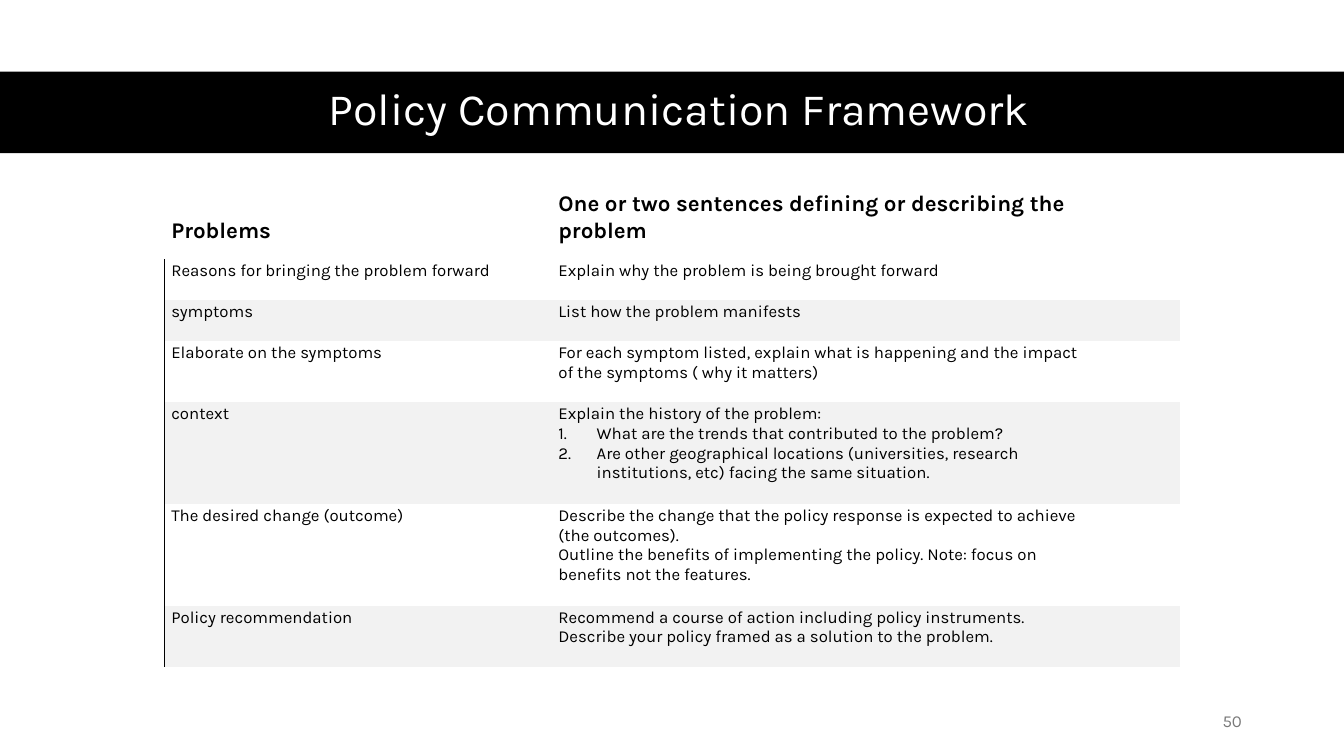
from dataclasses import dataclass

from lxml import etree
from pptx import Presentation
from pptx import util as u
from pptx.dml.color import RGBColor
from pptx.enum import shapes, text
from pptx.oxml.ns import qn

COLOURS = {"black": "000000", "white": "FFFFFF", "band": "F2F2F2", "grey": "797979"}
FONT = "Karla"
PAGE_WIDTH, PAGE_HEIGHT = u.Inches(13.333), u.Inches(7.5)
GRID_COLUMNS, GRID_ROWS = 160, 90
COLUMN_SPANS = (46.08, 64.8, 10.08)
NO_STYLE = "{2D5ABB26-0587-4C30-8999-92F81FD0307C}"


@dataclass(frozen=True)
class Area:
    column: float
    row: float
    columns: float
    rows: float

    def emu(self) -> tuple[int, int, int, int]:
        return across(self.column), down(self.row), across(self.columns), down(self.rows)


@dataclass(frozen=True)
class Label:
    words: str
    area: Area
    size: int
    colour: str
    align: text.PP_ALIGN
    spacing: float = 1.0


@dataclass(frozen=True)
class Topic:
    name: str
    guidance: tuple[str, ...]
    rows: float
    questions: tuple[str, ...] = ()


BANNER = Area(0, 8.52, GRID_COLUMNS, 9.72)
TABLE_CORNER = (19.56, 21.96)
LABELS = (
    Label("Policy Communication Framework", Area(7.32, 8.4, 147.12, 9.72),
          32, "white", text.PP_ALIGN.CENTER, 0.9),
    Label("50", Area(113.04, 83.4, 36, 4.8), 12, "grey", text.PP_ALIGN.RIGHT),
)
TOPICS = (
    Topic("Problems", ("One or two sentences defining or describing the problem",), 8.88),
    Topic("Reasons for bringing the problem forward",
          ("Explain why the problem is being brought forward",), 4.88),
    Topic("symptoms", ("List how the problem manifests",), 4.88),
    Topic("Elaborate on the symptoms",
          ("For each symptom listed, explain what is happening and the impact "
           "of the symptoms ( why it matters)",), 7.32),
    Topic("context", ("Explain the history of the problem:",), 12.1,
          ("What are the trends that contributed to the problem?",
           "Are other geographical locations (universities, research institutions, etc) "
           "facing the same situation.")),
    Topic("The desired change (outcome)",
          ("Describe the change that the policy response is expected to achieve (the outcomes).",
           "Outline the benefits of implementing the policy. Note: focus on benefits "
           "not the features."), 12.1),
    Topic("Policy recommendation",
          ("Recommend a course of action including policy instruments.",
           "Describe your policy framed as a solution to the problem."), 7.32),
)


def across(columns: float) -> int:
    return round(PAGE_WIDTH * columns / GRID_COLUMNS)


def down(rows: float) -> int:
    return round(PAGE_HEIGHT * rows / GRID_ROWS)


def rgb(name: str) -> RGBColor:
    return RGBColor.from_string(COLOURS[name])


def set_font(para, size: int, colour: str, bold: bool = False) -> None:
    para.font.name = FONT
    para.font.size = u.Pt(size)
    para.font.bold = bold
    para.font.color.rgb = rgb(colour)


def draw_banner(page) -> None:
    banner = page.shapes.add_shape(shapes.MSO_SHAPE.RECTANGLE, *BANNER.emu())
    banner.shadow.inherit = False
    banner.fill.solid()
    banner.fill.fore_color.rgb = rgb("black")
    banner.line.fill.background()


def draw_label(page, label: Label) -> None:
    frame = page.shapes.add_textbox(*label.area.emu()).text_frame
    frame.word_wrap = True
    frame.vertical_anchor = text.MSO_ANCHOR.MIDDLE
    para = frame.paragraphs[0]
    para.text = label.words
    para.alignment = label.align
    para.line_spacing = label.spacing
    set_font(para, label.size, label.colour)


def number_paragraph(para) -> None:
    properties = para._p.get_or_add_pPr()
    properties.set("marL", str(u.Inches(0.38)))
    properties.set("indent", str(-u.Inches(0.38)))
    bullet = etree.Element(qn("a:buAutoNum"), type="arabicPeriod")
    properties.insert(0, bullet)


def add_left_border(cell) -> None:
    border = etree.Element(qn("a:lnL"), w=str(u.Pt(0.75)))
    fill = etree.SubElement(border, qn("a:solidFill"))
    etree.SubElement(fill, qn("a:srgbClr"), val=COLOURS["black"])
    cell._tc.get_or_add_tcPr().insert(0, border)


def fill_cell(cell, lines: tuple[str, ...], questions: tuple[str, ...],
              heading: bool, banded: bool) -> None:
    cell.margin_left, cell.margin_top = u.Inches(0.07), u.Inches(0.02)
    cell.margin_right, cell.margin_bottom = u.Inches(0.1), u.Inches(0.15)
    cell.vertical_anchor = text.MSO_ANCHOR.BOTTOM if heading else text.MSO_ANCHOR.TOP
    if banded:
        cell.fill.solid()
        cell.fill.fore_color.rgb = rgb("band")
    else:
        cell.fill.background()
    cell.text = "\n".join(lines + questions)
    for index, para in enumerate(cell.text_frame.paragraphs):
        set_font(para, 16 if heading else 12, "black", heading)
        if questions and index >= len(lines):
            number_paragraph(para)


def draw_table(page) -> None:
    area = Area(*TABLE_CORNER, sum(COLUMN_SPANS), sum(topic.rows for topic in TOPICS))
    table = page.shapes.add_table(len(TOPICS), len(COLUMN_SPANS), *area.emu()).table
    table.first_row = table.horz_banding = False
    table._tbl.tblPr.find(qn("a:tableStyleId")).text = NO_STYLE
    for column, span in zip(table.columns, COLUMN_SPANS):
        column.width = across(span)
    for index, topic in enumerate(TOPICS):
        table.rows[index].height = down(topic.rows)
        heading, banded = index == 0, index > 0 and index % 2 == 0
        contents = (((topic.name,), ()), (topic.guidance, topic.questions), ((), ()))
        for column, (lines, questions) in enumerate(contents):
            fill_cell(table.cell(index, column), lines, questions, heading, banded)
        if not heading:
            add_left_border(table.cell(index, 0))


def main() -> None:
    deck = Presentation()
    deck.slide_width, deck.slide_height = PAGE_WIDTH, PAGE_HEIGHT
    page = deck.slides.add_slide(deck.slide_layouts[6])
    draw_banner(page)
    title, page_number = LABELS
    draw_label(page, title)
    draw_table(page)
    draw_label(page, page_number)
    deck.save("out.pptx")


if __name__ == "__main__":
    main()
